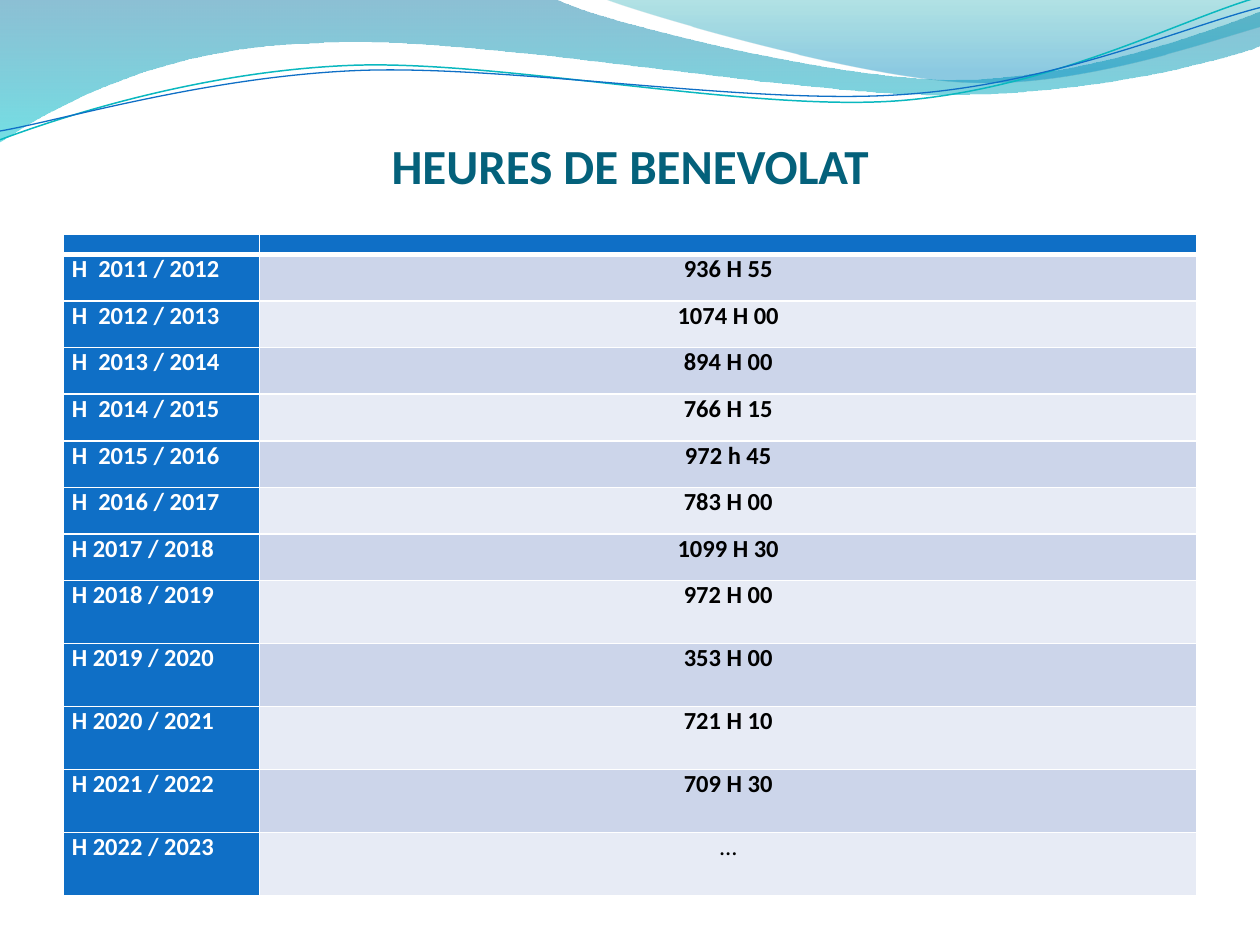
from dataclasses import dataclass
from math import cos, radians, sin
from typing import NamedTuple

from lxml.etree import SubElement
from pptx import Presentation
from pptx.dml.color import RGBColor
from pptx.enum.text import MSO_ANCHOR as Anchor, PP_ALIGN as Align
from pptx.oxml.ns import qn
from pptx.util import Inches, Pt

FONT = "Calibri"
BLUE, WHITE, BLACK, TEAL = "0F6FC6", "FFFFFF", "000000", "04617B"
BANDS = ("CCD5EA", "E7EBF5")


class Frame(NamedTuple):
    left: float
    top: float
    width: float
    height: float


class Stop(NamedTuple):
    position: float
    color: str
    opacity: int


@dataclass
class Wave:
    frame: Frame
    segments: list[tuple[float, ...]]
    stops: tuple[Stop, ...] = ()
    line: str = ""
    width: float = 0
    rotation: float = 0


class Season(NamedTuple):
    label: str
    hours: str
    height: float


WAVES = [
    Wave(Frame(-0.01, -0.01, 10.02, 1.14),
         [(0, 0), (4.4, -0.01), (4.76, 0.17, 6.64, 0.63, 7.58, 0.63),
          (8.53, 0.63, 9.58, 0.26, 10, 0.09), (10.01, 0.36),
          (9.83, 0.44, 8.7, 0.76, 7.46, 0.75), (6.22, 0.75, 3.82, 0.28, 2.57, 0.34),
          (1.29, 0.36, 0.46, 0.83, -0.01, 1.13), (0, 0)],
         stops=(Stop(0, "0074A1", 45), Stop(1, "00C6CF", 55))),
    Wave(Frame(4.79, -0.01, 5.21, 0.7),
         [(4.79, -0.01), (5.09, 0.11, 6.82, 0.62, 7.69, 0.65),
          (8.56, 0.69, 9.61, 0.32, 10, 0.21), (10, 0), (4.79, -0.01)],
         stops=(Stop(0, "00A1A9", 30), Stop(0.8, "008BBF", 45))),
    Wave(Frame(-0.02, 0.22, 10.02, 0.71),
         [(0, 1.11), (0.48, 0.93, 1.58, 0.57, 2.77, 0.52),
          (3.95, 0.47, 5.93, 0.89, 7.13, 0.8), (8.33, 0.71, 9.38, 0.15, 9.98, -0.02)],
         line="0AB8BF", width=0.85, rotation=357.3),
    Wave(Frame(-0.02, 0.3, 10.03, 0.58),
         [(0, 1.04), (0.47, 0.96, 1.64, 0.61, 2.83, 0.56),
          (4.03, 0.51, 5.97, 0.84, 7.17, 0.75), (8.36, 0.67, 9.41, 0.21, 10, 0.06)],
         line=BLUE, width=0.75, rotation=357.3),
]

SEASONS = [
    Season("H  2011 / 2012", "936 H 55", 0.37),
    Season("H  2012 / 2013", "1074 H 00", 0.37),
    Season("H  2013 / 2014", "894 H 00", 0.37),
    Season("H  2014 / 2015", "766 H 15", 0.37),
    Season("H  2015 / 2016", "972 h 45", 0.37),
    Season("H  2016 / 2017", "783 H 00", 0.37),
    Season("H 2017 / 2018", "1099 H 30", 0.37),
    Season("H 2018 / 2019", "972 H 00", 0.5),
    Season("H 2019 / 2020", "353 H 00", 0.5),
    Season("H 2020 / 2021", "721 H 10", 0.5),
    Season("H 2021 / 2022", "709 H 30", 0.5),
    Season("H 2022 / 2023", "…", 0.5),
]


def rgb(color: str) -> RGBColor:
    return RGBColor.from_string(color)


def place(wave: Wave, x: float, y: float) -> tuple[int, int]:
    half_width, half_height = wave.frame.width / 2, wave.frame.height / 2
    across = x - wave.frame.left - half_width
    down = y - wave.frame.top - half_height
    turn = radians(-wave.rotation)
    return (Inches(half_width + across * cos(turn) - down * sin(turn)),
            Inches(half_height + across * sin(turn) + down * cos(turn)))


def bend(shape, wave: Wave) -> None:
    shape.left, shape.top, shape.width, shape.height = map(Inches, wave.frame)
    outline = next(shape._element.iter(qn("a:path")))
    outline.set("w", str(shape.width))
    outline.set("h", str(shape.height))
    for step, segment in zip(list(outline), wave.segments):
        if len(segment) == 6:
            step.tag = qn("a:cubicBezTo")
        for point in list(step):
            step.remove(point)
        for x, y in zip(segment[::2], segment[1::2]):
            across, down = place(wave, x, y)
            SubElement(step, qn("a:pt"), x=str(across), y=str(down))


def draw_wave(page, wave: Wave) -> None:
    anchors = [tuple(map(Inches, segment[-2:])) for segment in wave.segments]
    builder = page.shapes.build_freeform(*anchors[0])
    builder.add_line_segments(anchors[1:], close=bool(wave.stops))
    shape = builder.convert_to_shape()
    bend(shape, wave)
    shape.rotation = wave.rotation
    shape.shadow.inherit = False
    if not wave.stops:
        shape.fill.background()
        shape.line.color.rgb = rgb(wave.line)
        shape.line.width = Pt(wave.width)
        return
    shape.line.fill.background()
    shape.fill.gradient()
    shape.fill.gradient_angle = 270
    for target, stop in zip(shape.fill.gradient_stops, wave.stops):
        target.position = stop.position
        target.color.rgb = rgb(stop.color)
    for element, stop in zip(shape._element.spPr.iter(qn("a:srgbClr")), wave.stops):
        SubElement(element, qn("a:alpha"), val=str(stop.opacity * 1000))


def write(para, text: str, size: float, color: str, align: Align, bold: bool = True) -> None:
    para.text = text
    para.alignment = align
    font = para.font
    font.name, font.size, font.bold = FONT, Pt(size), bold
    font.color.rgb = rgb(color)


def draw_title(page, text: str) -> None:
    box = page.shapes.add_textbox(Inches(0.5), Inches(0.29), Inches(9), Inches(1.25))
    frame = box.text_frame
    frame.word_wrap = True
    frame.vertical_anchor = Anchor.BOTTOM
    frame.margin_left = frame.margin_right = frame.margin_bottom = 0
    frame.margin_top = Inches(0.05)
    write(frame.paragraphs[0], text, 28, TEAL, Align.CENTER)


def style_cell(cell, fill: str, top: float = 1, bottom: float = 1) -> None:
    cell.margin_left = cell.margin_right = Inches(0.07)
    cell.margin_top = cell.margin_bottom = 0
    properties = cell._tc.get_or_add_tcPr()
    for side, width in (("L", 1), ("R", 1), ("T", top), ("B", bottom)):
        border = SubElement(properties, qn(f"a:ln{side}"), w=str(Pt(width)))
        solid = SubElement(border, qn("a:solidFill"))
        SubElement(solid, qn("a:srgbClr"), val=WHITE)
    cell.fill.solid()
    cell.fill.fore_color.rgb = rgb(fill)


def draw_hours(page, seasons: list[Season]) -> None:
    heights = [0.16] + [season.height for season in seasons]
    table = page.shapes.add_table(len(heights), 2, Inches(0.5), Inches(1.86),
                                  Inches(9), Inches(sum(heights))).table
    for column, width in zip(table.columns, (1.56, 7.44)):
        column.width = Inches(width)
    for row, height in zip(table.rows, heights):
        row.height = Inches(height)
    for cell in table.rows[0].cells:
        style_cell(cell, BLUE, bottom=3)
        SubElement(cell.text_frame.paragraphs[0]._p, qn("a:endParaRPr"), sz="800")
    for index, season in enumerate(seasons):
        label, hours = table.rows[index + 1].cells
        top = 1 if index else 3
        style_cell(label, BLUE, top)
        style_cell(hours, BANDS[index % 2], top)
        write(label.text_frame.paragraphs[0], season.label, 14, WHITE, Align.LEFT)
        write(hours.text_frame.paragraphs[0], season.hours, 14, BLACK, Align.CENTER,
              bold=season.hours != "…")


def main() -> None:
    deck = Presentation()
    deck.slide_width, deck.slide_height = Inches(10), Inches(7.5)
    page = deck.slides.add_slide(deck.slide_layouts[6])
    for wave in WAVES:
        draw_wave(page, wave)
    draw_title(page, "HEURES DE BENEVOLAT")
    draw_hours(page, SEASONS)
    deck.save("out.pptx")


if __name__ == "__main__":
    main()
